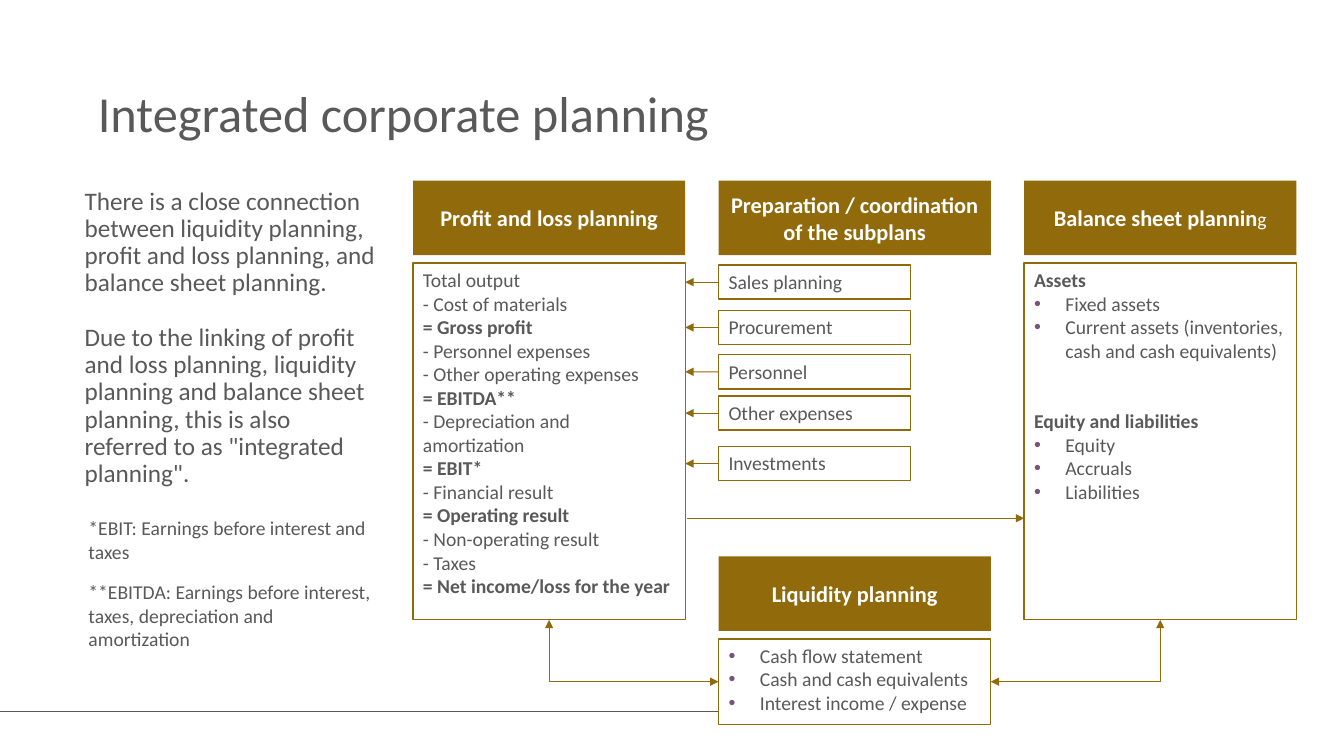
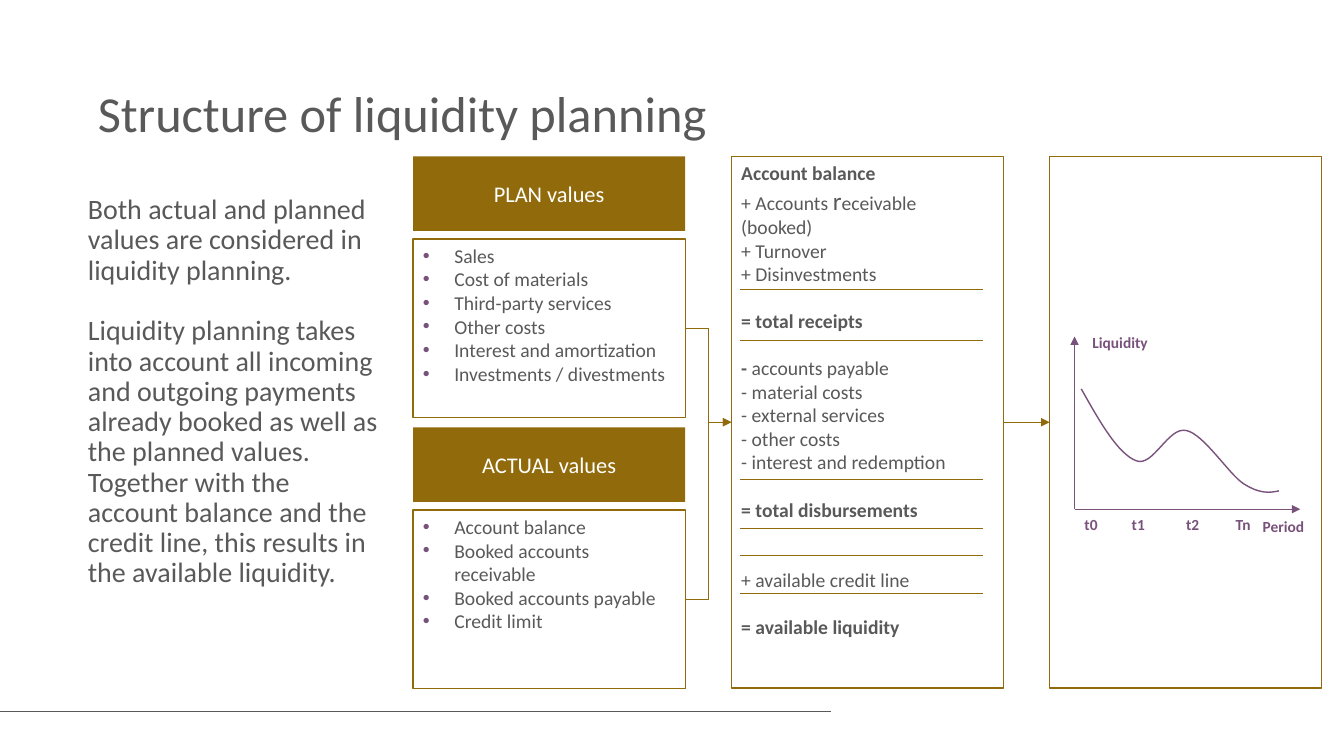
from dataclasses import dataclass

from lxml import etree
from pptx import Presentation
from pptx.dml.color import RGBColor
from pptx.enum.shapes import MSO_CONNECTOR, MSO_SHAPE
from pptx.enum.text import MSO_ANCHOR, MSO_AUTO_SIZE, PP_ALIGN
from pptx.oxml.ns import qn
from pptx.util import Cm, Pt

RECTANGLE = MSO_SHAPE.RECTANGLE
STRAIGHT, ELBOW = MSO_CONNECTOR.STRAIGHT, MSO_CONNECTOR.ELBOW
LEFT, CENTER = PP_ALIGN.LEFT, PP_ALIGN.CENTER
TOP, MIDDLE = MSO_ANCHOR.TOP, MSO_ANCHOR.MIDDLE
SIDE_LEFT, SIDE_BOTTOM, SIDE_RIGHT = 1, 2, 3

FONT = "Calibri"
GREY, GOLD, PURPLE, WHITE = "595959", "916A0C", "79527B", "FFFFFF"

# Shared measures in centimetres
COLUMN_LEFT, COLUMN_WIDTH = 10.41, 6.86
HEADER_HEIGHT, HEADER_GAP = 1.88, 0.2
BLANK_LINE = 16.8  # points, one line of 14 pt text


@dataclass
class Line:
    """One paragraph; text is a string or a list of (text, run format)."""
    text: object
    bold: bool = False
    bullet: bool = False
    gap: float = 0


def color(value):
    return RGBColor.from_string(value)


def add_text(frame, text, *, size=14, ink=GREY, bold=False, align=LEFT,
             gap=0, spacing=None, bullet=False):
    """Add a paragraph to the frame, filling its empty first one if there is one."""
    paragraph = frame.add_paragraph() if frame.text else frame.paragraphs[0]
    properties = paragraph._p.get_or_add_pPr()
    indent = Cm(0.79) if bullet else 0
    properties.set("marL", str(indent))
    properties.set("indent", str(-indent))
    if bullet:
        bullet_color = etree.SubElement(properties, qn("a:buClr"))
        etree.SubElement(bullet_color, qn("a:srgbClr"), val=PURPLE)
        etree.SubElement(properties, qn("a:buFont"), typeface="Arial")
        etree.SubElement(properties, qn("a:buChar"), char="•")
    else:
        etree.SubElement(properties, qn("a:buNone"))
    paragraph.alignment = align
    paragraph.space_before = Pt(gap)
    if spacing:
        paragraph.line_spacing = spacing
    for part, changes in ([(text, {})] if isinstance(text, str) else text):
        run = paragraph.add_run()
        run.text = part
        run.font.name = FONT
        run.font.size = Pt(changes.get("size", size))
        run.font.bold = changes.get("bold", bold)
        run.font.color.rgb = color(ink)


def add_lines(frame, lines):
    for line in lines:
        add_text(frame, line.text, bold=line.bold, bullet=line.bullet, gap=line.gap)


def bullets(*texts):
    return [Line(text, bullet=True) for text in texts]


def place(shape, left, top, width, height):
    shape.left, shape.top = Cm(left), Cm(top)
    shape.width, shape.height = Cm(width), Cm(height)


def prepare_frame(shape, anchor=TOP):
    frame = shape.text_frame
    frame.word_wrap = True
    frame.auto_size = MSO_AUTO_SIZE.NONE
    frame.vertical_anchor = anchor
    return frame


def add_text_box(slide, left, top, width, height):
    box = slide.shapes.add_textbox(Cm(left), Cm(top), Cm(width), Cm(height))
    return prepare_frame(box)


def add_box(slide, left, top, width, height, fill=WHITE, outline=GOLD, anchor=TOP):
    shape = slide.shapes.add_shape(RECTANGLE, Cm(left), Cm(top), Cm(width), Cm(height))
    shape.shadow.inherit = False
    shape.fill.solid()
    shape.fill.fore_color.rgb = color(fill)
    if outline:
        shape.line.color.rgb = color(outline)
        shape.line.width = Pt(1)
    else:
        shape.line.fill.background()
    prepare_frame(shape, anchor)
    return shape


def add_panel(slide, left, top, width, height, lines=()):
    panel = add_box(slide, left, top, width, height)
    add_lines(panel.text_frame, lines)
    return panel


def add_headed_panel(slide, left, top, height, heading, lines, bold=True):
    """Gold heading with a white panel of the given height below it."""
    header = add_box(slide, left, top, COLUMN_WIDTH, HEADER_HEIGHT, GOLD, None, MIDDLE)
    add_text(header.text_frame, heading, size=16, ink=WHITE, bold=bold, align=CENTER)
    panel_top = top + HEADER_HEIGHT + HEADER_GAP
    return add_panel(slide, left, panel_top, COLUMN_WIDTH, height, lines)


def style_connector(connector, ink, width, heads):
    connector.line.color.rgb = color(ink)
    connector.line.width = Pt(width)
    properties = connector._element.spPr
    outline = properties.find(qn("a:ln"))
    for head in heads:
        etree.SubElement(outline, qn("a:" + head), type="triangle")
    etree.SubElement(properties, qn("a:effectLst"))


def add_line(slide, start, end, ink=GOLD, width=0.75, heads=()):
    points = [Cm(value) for value in (*start, *end)]
    connector = slide.shapes.add_connector(STRAIGHT, *points)
    style_connector(connector, ink, width, heads)
    return connector


def side_point(shape, side):
    middle_x, middle_y = shape.left + shape.width // 2, shape.top + shape.height // 2
    return [(middle_x, shape.top), (shape.left, middle_y),
            (middle_x, shape.top + shape.height),
            (shape.left + shape.width, middle_y)][side]


def join(slide, start, start_side, end, end_side, kind=ELBOW,
         heads=("tailEnd",), one_corner=False):
    """Connect the middles of two box sides."""
    connector = slide.shapes.add_connector(
        kind, *side_point(start, start_side), *side_point(end, end_side))
    connector.begin_connect(start, start_side)
    connector.end_connect(end, end_side)
    if one_corner:
        connector._element.spPr.find(qn("a:prstGeom")).set("prst", "bentConnector2")
    style_connector(connector, GOLD, 0.75, heads)


def start_slide(presentation, title, paragraphs, size, left, top, height):
    """Slide with title, introduction and footer rule."""
    slide = presentation.slides.add_slide(presentation.slide_layouts[1])
    place(slide.shapes.title, 2.21, 2.11, 29.49, 2.24)
    add_text(prepare_frame(slide.shapes.title), title, size=36, spacing=0.9)
    body = slide.placeholders[1]
    place(body, left, top, 7.85, height)
    frame = prepare_frame(body)
    for index, text in enumerate(paragraphs):
        add_text(frame, text, size=size, spacing=0.9, gap=index * size * 1.09)
    add_line(slide, (0, 17.93), (20.93, 17.93), GREY, 1)
    return slide


def add_subplans(slide, left, top, target_right):
    """Subplan boxes, each with an arrow to the panel on the left."""
    subplans = [("Sales planning", 0.05), ("Procurement", 1.19), ("Personnel", 2.31),
                ("Other expenses", 3.35), ("Investments", 4.62)]
    height = 0.86
    for name, offset in subplans:
        box = add_panel(slide, left, top + offset, 4.83, height, [Line(name)])
        middle = top + offset + height / 2
        arrow = add_line(slide, (left, middle), (target_right, middle), heads=["tailEnd"])
        arrow.begin_connect(box, SIDE_LEFT)


def cubic_points(start, controls, steps=16):
    """Points on a chain of cubic curves; controls holds triples of points."""
    points = [start]
    for first, second, end in controls:
        begin = points[-1]
        for step in range(1, steps + 1):
            t = step / steps
            points.append(tuple(
                (1 - t) ** 3 * a + 3 * (1 - t) ** 2 * t * b + 3 * (1 - t) * t ** 2 * c + t ** 3 * d
                for a, b, c, d in zip(begin, first, second, end)))
    return points


def add_liquidity_sketch(slide, left, top):
    """Axes, labels and curve inside the box at left, top."""
    origin = (left + 0.63, top + 8.89)
    for end in ((left + 6.32, origin[1]), (origin[0], top + 4.54)):
        add_line(slide, origin, end, PURPLE, heads=["tailEnd"])
    labels = [("Liquidity", 0.83, 4.32, 2.69), ("t0", 0.63, 8.91, 1.73),
              ("t1", 1.82, 8.91, 1.73), ("t2", 3.19, 8.91, 1.73),
              ("Tn", 4.44, 8.91, 1.73), ("Period", 5.12, 8.96, 1.73)]
    for text, x, y, width in labels:
        frame = add_text_box(slide, left + x, top + y, width, 0.74)
        add_text(frame, text, size=11, ink=PURPLE, bold=True)
    curve = cubic_points((0.8, 5.86), [
        ((1.26, 6.68), (1.72, 7.49), (2.18, 7.67)),
        ((2.61, 7.85), (2.99, 6.8), (3.45, 6.91)),
        ((3.9, 7.01), (4.51, 8), (4.89, 8.25)),
        ((5.3, 8.51), (5.55, 8.48), (5.78, 8.43))])
    points = [(Cm(left + x), Cm(top + y)) for x, y in curve]
    builder = slide.shapes.build_freeform(*points[0], scale=1.0)
    builder.add_line_segments(points[1:], close=False)
    shape = builder.convert_to_shape()
    shape.shadow.inherit = False
    shape.fill.background()
    shape.line.color.rgb = color(PURPLE)
    shape.line.width = Pt(1)


def build_integrated_planning(presentation):
    slide = start_slide(presentation, "Integrated corporate planning", [
        "There is a close connection between liquidity planning, profit and loss "
        "planning, and balance sheet planning.",
        "Due to the linking of profit and loss planning, liquidity planning and balance "
        "sheet planning, this is also referred to as \"integrated planning\"."],
        18, 1.88, 4.62, 9.96)
    notes = add_text_box(slide, 1.98, 12.88, 7.62, 4.7)
    add_lines(notes, [
        Line("*EBIT: Earnings before interest and taxes"),
        Line("**EBITDA: Earnings before interest, taxes, depreciation and amortization",
             gap=12)])

    # Three columns
    top, height, step = 4.55, 8.99, 7.7
    profit_left, subplan_left, balance_left = (COLUMN_LEFT + step * i for i in range(3))
    panel_top = top + HEADER_HEIGHT + HEADER_GAP
    statement = ["Total output", "- Cost of materials", "= Gross profit",
                 "- Personnel expenses", "- Other operating expenses", "= EBITDA**",
                 "- Depreciation and amortization", "= EBIT*", "- Financial result",
                 "= Operating result", "- Non-operating result", "- Taxes",
                 "= Net income/loss for the year"]
    profit = add_headed_panel(
        slide, profit_left, top, height, "Profit and loss planning",
        [Line(text, bold=text.startswith("=")) for text in statement])
    balance = add_headed_panel(
        slide, balance_left, top, height,
        [("Balance sheet plannin", {}), ("g", {"size": 14, "bold": False})],
        [Line("Assets", bold=True),
         *bullets("Fixed assets", "Current assets (inventories, cash and cash equivalents)"),
         Line("Equity and liabilities", bold=True, gap=2 * BLANK_LINE),
         *bullets("Equity", "Accruals", "Liabilities")])
    header = add_box(slide, subplan_left, top, COLUMN_WIDTH, HEADER_HEIGHT,
                     GOLD, None, MIDDLE)
    add_text(header.text_frame, "Preparation / coordination of the subplans",
             size=16, ink=WHITE, bold=True, align=CENTER)
    profit_right = profit_left + COLUMN_WIDTH
    add_subplans(slide, subplan_left, panel_top, profit_right)

    # Liquidity and the links between the plans
    liquidity = add_headed_panel(
        slide, subplan_left, 14.02, 2.16, "Liquidity planning",
        bullets("Cash flow statement", "Cash and cash equivalents",
                "Interest income / expense"))
    add_line(slide, (profit_right + 0.05, 13.06), (balance_left, 13.06), heads=["tailEnd"])
    for side, target in ((SIDE_LEFT, profit), (SIDE_RIGHT, balance)):
        join(slide, liquidity, side, target, SIDE_BOTTOM,
             heads=("headEnd", "tailEnd"), one_corner=True)


def build_liquidity_structure(presentation):
    slide = start_slide(presentation, "Structure of liquidity planning", [
        "Both actual and planned values are considered in liquidity planning.",
        "Liquidity planning takes into account all incoming and outgoing payments already "
        "booked as well as the planned values. Together with the account balance and the "
        "credit line, this results in the available liquidity."],
        20, 1.96, 4.8, 10.95)
    top, height, step = 3.94, 13.4, 8.02
    account_left, sketch_left = COLUMN_LEFT + step, COLUMN_LEFT + 2 * step

    # Plan and actual values
    groups = [
        ("PLAN values", ["Sales", "Cost of materials", "Third-party services", "Other costs",
                         "Interest and amortization", "Investments / divestments"]),
        ("ACTUAL values", ["Account balance", "Booked accounts receivable",
                           "Booked accounts payable", "Credit limit"])]
    sources = [add_headed_panel(slide, COLUMN_LEFT, top + index * 6.83, 4.5, heading,
                                bullets(*items), bold=False)
               for index, (heading, items) in enumerate(groups)]

    # Account statement
    account = add_panel(slide, account_left, top, COLUMN_WIDTH, height, [
        Line("Account balance", bold=True),
        Line([("+ Accounts ", {}), ("r", {"size": 18}), ("eceivable", {})]),
        Line("(booked)"), Line("+ Turnover"), Line("+ Disinvestments"),
        Line("= total receipts", bold=True, gap=BLANK_LINE),
        Line([("- ", {"bold": True}), ("accounts payable", {})], gap=BLANK_LINE),
        Line("- material costs"), Line("- external services"), Line("- other costs"),
        Line("- interest and redemption"),
        Line("= total disbursements", bold=True, gap=BLANK_LINE),
        Line("+ available credit line", gap=2 * BLANK_LINE),
        Line("= available liquidity", bold=True, gap=BLANK_LINE)])
    for offset in (3.35, 4.65, 8.15, 9.37, 10.06, 11.02):
        add_line(slide, (account_left + 0.23, top + offset),
                 (account_left + 6.33, top + offset))

    # Liquidity curve
    sketch = add_panel(slide, sketch_left, top, COLUMN_WIDTH, height)
    add_liquidity_sketch(slide, sketch_left, top)
    for source in sources:
        join(slide, source, SIDE_RIGHT, account, SIDE_LEFT)
    join(slide, account, SIDE_RIGHT, sketch, SIDE_LEFT, kind=STRAIGHT)


def main():
    presentation = Presentation()
    presentation.slide_width, presentation.slide_height = Cm(33.87), Cm(19.05)
    build_integrated_planning(presentation)
    build_liquidity_structure(presentation)
    presentation.save("out.pptx")


if __name__ == "__main__":
    main()
